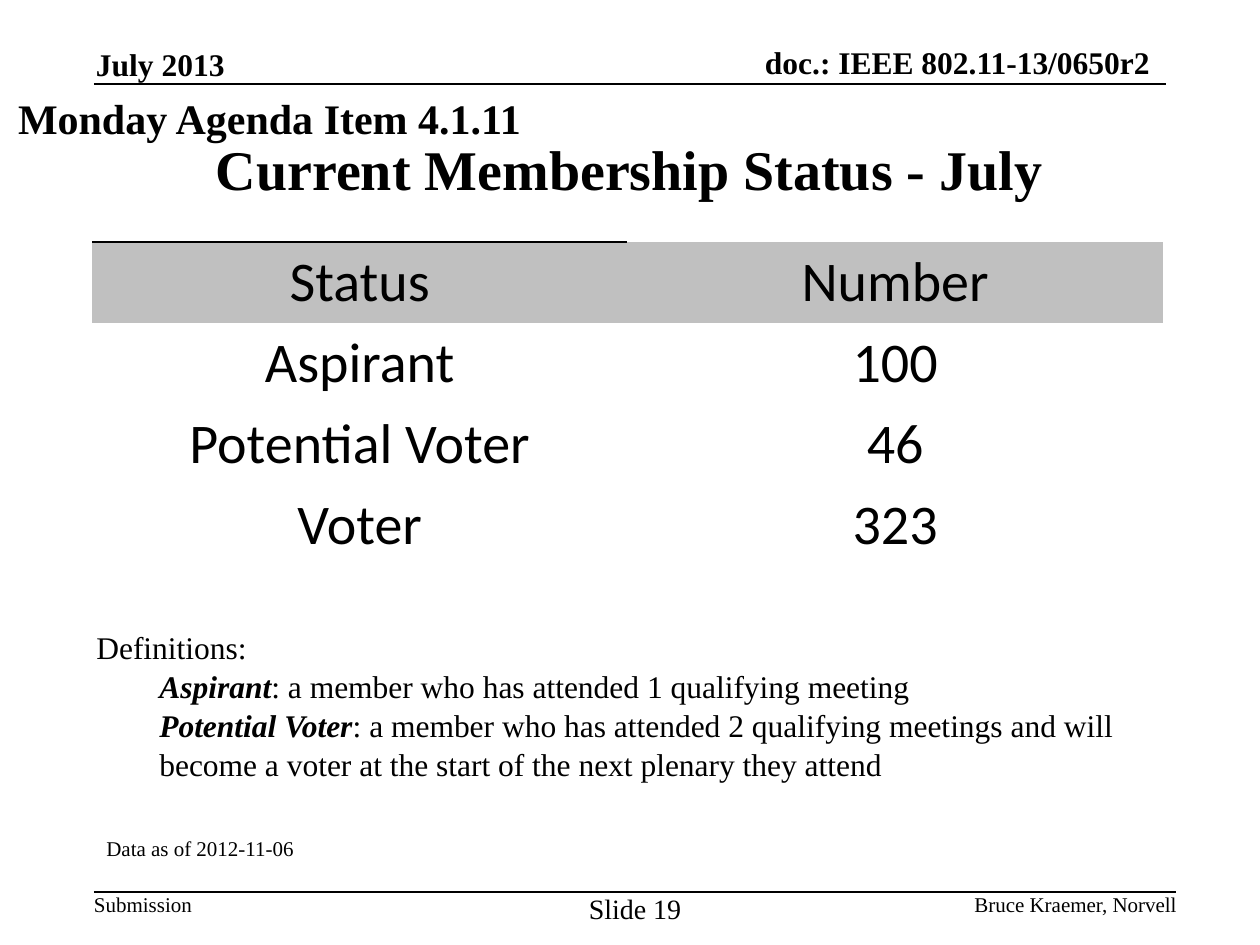
from lxml import etree
from pptx import Presentation
from pptx.dml.color import RGBColor
from pptx.enum.shapes import MSO_CONNECTOR
from pptx.enum.text import MSO_ANCHOR, MSO_AUTO_SIZE, PP_ALIGN
from pptx.oxml.ns import qn
from pptx.util import Pt

EMU_PER_PX = 914400 // 126
LEFT, CENTER, RIGHT = PP_ALIGN.LEFT, PP_ALIGN.CENTER, PP_ALIGN.RIGHT
TOP, MIDDLE, BOTTOM = MSO_ANCHOR.TOP, MSO_ANCHOR.MIDDLE, MSO_ANCHOR.BOTTOM
NO_FIT = MSO_AUTO_SIZE.NONE
STRAIGHT = MSO_CONNECTOR.STRAIGHT
PLAIN_TABLE = "{2D5ABB26-0587-4C30-8999-92F81FD0307C}"
SERIF, SANS = "Times New Roman", "Calibri"
BLACK, WHITE, GREY = "000000", "FFFFFF", "C0C0C0"


def px(length):
    return length * EMU_PER_PX


def color(value):
    return RGBColor.from_string(value)


class Page:
    def __init__(self, deck):
        self.slide = deck.slides.add_slide(deck.slide_layouts[5])
        self.shapes = self.slide.shapes

    def style(self, para, size, bold=None, align=LEFT, font=SERIF):
        para.alignment = align
        para.font.name = font
        para.font.size = Pt(size)
        para.font.bold = bold
        para.font.color.rgb = color(BLACK)

    def frame(self, shape, anchor, inset, wrap=True):
        frame = shape.text_frame
        frame.auto_size = NO_FIT
        frame.word_wrap = wrap
        frame.vertical_anchor = anchor
        if not inset:
            frame.margin_left = frame.margin_right = 0
            frame.margin_top = frame.margin_bottom = 0
        return frame

    def title(self, words, left, top, width, height):
        shape = self.shapes.title
        shape.left, shape.top = px(left), px(top)
        shape.width, shape.height = px(width), px(height)
        frame = self.frame(shape, MIDDLE, True)
        frame.text = words
        self.style(frame.paragraphs[0], 32, True, CENTER)

    def text(self, words, left, top, width, height, size, bold=False,
             align=LEFT, anchor=TOP, inset=False, wrap=False):
        box = self.shapes.add_textbox(px(left), px(top), px(width), px(height))
        frame = self.frame(box, anchor, inset, wrap)
        frame.text = words
        self.style(frame.paragraphs[0], size, bold, align)
        return frame

    def definition(self, frame, term, meaning):
        para = frame.add_paragraph()
        para.level = 1
        properties = para._p.get_or_add_pPr()
        properties.set("marL", str(px(63)))
        properties.set("indent", "0")
        self.style(para, 18)
        span = para.add_run()
        span.text = term
        span.font.bold = span.font.italic = True
        para.add_run().text = meaning

    def rule(self, left, right, y):
        line = self.shapes.add_connector(STRAIGHT, px(left), px(y), px(right), px(y))
        line.line.color.rgb = color(BLACK)
        line.line.width = Pt(1)
        etree.SubElement(line._element.spPr, qn("a:effectLst"))

    def table(self, rows, left, top, width, row_height):
        holder = self.shapes.add_table(len(rows), len(rows[0]), px(left), px(top),
                                       px(width), px(row_height * len(rows)))
        table = holder.table
        table.first_row = table.horz_banding = False
        table._tbl.tblPr.find(qn("a:tableStyleId")).text = PLAIN_TABLE
        for r, row in enumerate(rows):
            for c, words in enumerate(row):
                cell = table.cell(r, c)
                cell.text = words
                cell.vertical_anchor = TOP if r else MIDDLE
                cell.fill.solid()
                cell.fill.fore_color.rgb = color(WHITE if r else GREY)
                self.style(cell.text_frame.paragraphs[0], 32, False, CENTER, SANS)
        return table

    def top_border(self, cell):
        border = etree.Element(qn("a:lnT"), w=str(Pt(1)))
        fill = etree.SubElement(border, qn("a:solidFill"))
        etree.SubElement(fill, qn("a:srgbClr"), val=BLACK)
        cell._tc.get_or_add_tcPr().insert(0, border)


def main():
    deck = Presentation()
    deck.slide_width, deck.slide_height = px(1260), px(945)
    page = Page(deck)

    # Header
    page.text("July 2013", 96, 45, 130, 38, 18, True, anchor=BOTTOM)
    page.text("doc.: IEEE 802.11-13/0650r2", 698, 43, 452, 38, 18, True,
              RIGHT, BOTTOM, wrap=True)
    page.rule(94, 1166, 84)

    # Title and agenda item
    page.title("Current Membership Status - July", 94, 94, 1071, 148)
    page.text("Monday Agenda Item 4.1.11", 3, 86, 533, 63, 24, True, CENTER, inset=True)

    # Membership table
    table = page.table([("Status", "Number"), ("Aspirant", "100"),
                        ("Potential Voter", "46"), ("Voter", "323")],
                       92, 242, 1071, 80)
    page.top_border(table.cell(0, 0))

    # Definitions
    frame = page.text("Definitions:", 84, 620, 1071, 165, 18, inset=True, wrap=True)
    page.definition(frame, "Aspirant", ": a member who has attended 1 qualifying meeting")
    page.definition(frame, "Potential Voter",
                    ": a member who has attended 2 qualifying meetings and will "
                    "become a voter at the start of the next plenary they attend")
    for para in frame.paragraphs:
        para.line_spacing = 1.04
    page.text("Data as of 2012-11-06", 94, 829, 1071, 38, 12, inset=True, wrap=True)

    # Footer
    page.rule(94, 1176, 892)
    page.text("Submission", 94, 892, 98, 25, 12)
    page.text("Slide 19", 586, 892, 98, 34, 16, align=CENTER)
    page.text("Bruce Kraemer, Norvell", 906, 892, 271, 25, 12, align=RIGHT, wrap=True)

    deck.save("out.pptx")


if __name__ == "__main__":
    main()
